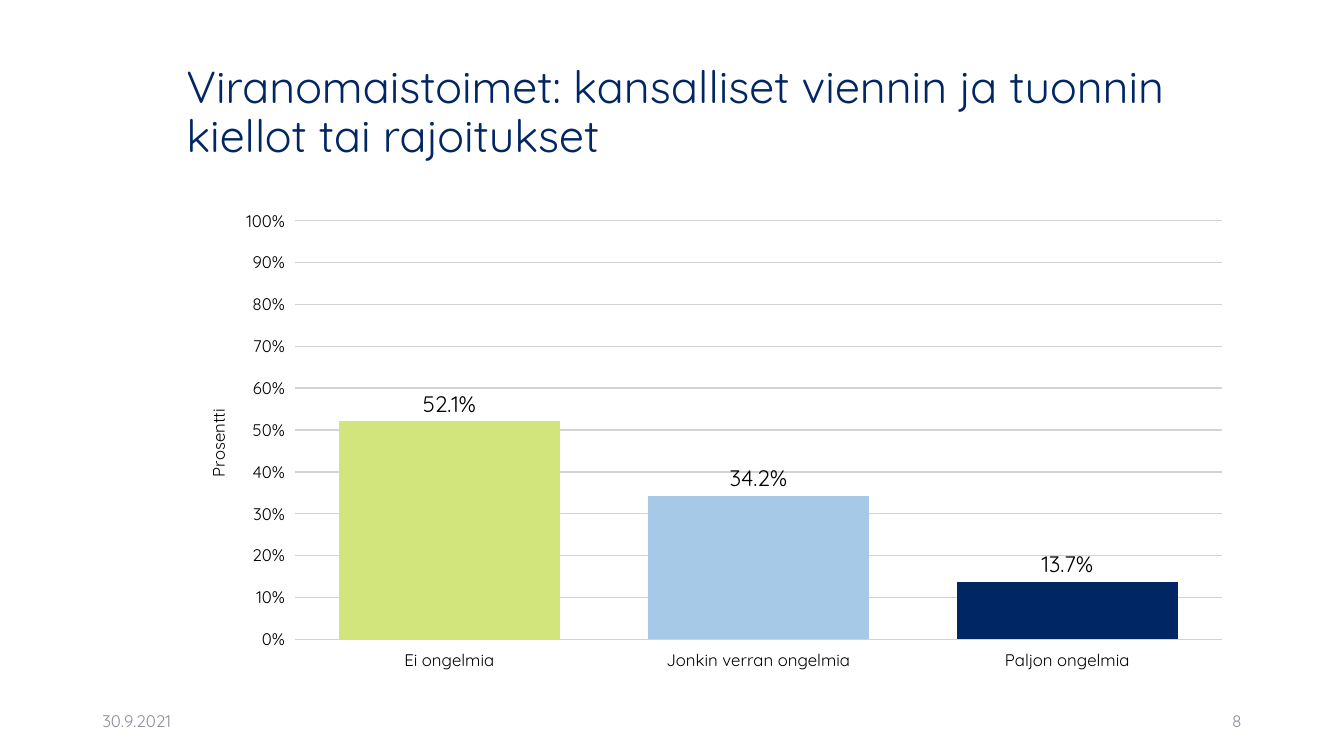
from dataclasses import dataclass

from lxml import etree
from pptx import Presentation
from pptx.chart.data import CategoryChartData
from pptx.dml.color import RGBColor as RGB
from pptx.enum.chart import XL_CHART_TYPE as CT, XL_LABEL_POSITION as LP, XL_TICK_MARK as TM
from pptx.enum.text import MSO_ANCHOR as ANCHOR, PP_ALIGN as ALIGN
from pptx.oxml import parse_xml
from pptx.oxml.ns import nsdecls, qn
from pptx.util import Inches, Pt

COLS, ROWS = 160, 90  # grid of the slide
CELL = Inches(1) / 12


@dataclass(frozen=True)
class Theme:
    font: str = "Quicksand"
    navy: str = "002663"
    lime: str = "D1E57C"
    sky: str = "A5C9E7"
    text: str = "000000"
    muted: str = "8C8E9F"
    grid: str = "D3D3D3"
    paper: str = "FFFFFF"
    title_size: int = 32
    label_size: int = 16
    small_size: int = 12


def color(value):
    return RGB.from_string(value)


def style_font(font, name, size, fill, bold=False):
    font.name, font.size, font.bold = name, Pt(size), bold
    font.color.rgb = color(fill)


def write(tf, text, *, font, size, fill, align=ALIGN.LEFT, spacing=1.0):
    """Put one formatted paragraph into a text frame."""
    p = tf.paragraphs[0]
    p.alignment, p.line_spacing = align, spacing
    r = p.add_run()
    r.text = text
    style_font(r.font, font, size, fill)


def set_layout(parent, index, inner=False, **shares):
    """Place a chart part by shares of the chart's size."""
    for old in parent.findall(qn("c:layout")):
        parent.remove(old)
    layout = etree.Element(qn("c:layout"))
    manual = etree.SubElement(layout, qn("c:manualLayout"))
    settings = {"layoutTarget": "inner"} if inner else {}
    settings |= {"xMode": "edge", "yMode": "edge"} | shares
    for tag, value in settings.items():
        etree.SubElement(manual, qn(f"c:{tag}")).set("val", str(value))
    parent.insert(index, layout)


class Builder:
    def __init__(self, prs, theme):
        self.theme = theme
        self.s = prs.slides.add_slide(prs.slide_layouts[6])

    def box(self, col, row, cols, rows):
        return [round(n * CELL) for n in (col, row, cols, rows)]

    def text(self, text, *place, **fmt):
        tf = self.s.shapes.add_textbox(*self.box(*place)).text_frame
        tf.word_wrap, tf.vertical_anchor = True, ANCHOR.MIDDLE
        write(tf, text, font=self.theme.font, **fmt)

    def column_chart(self, shares, fills, axis_title, *place):
        t = self.theme
        data = CategoryChartData()
        data.categories = list(shares)
        data.add_series("Series 1", list(shares.values()))
        chart = self.s.shapes.add_chart(CT.COLUMN_CLUSTERED, *self.box(*place), data).chart
        chart.has_legend = chart.has_title = False
        style_font(chart.font, t.font, t.small_size, t.text)

        # Columns and their labels
        plot = chart.plots[0]
        plot.gap_width, plot.vary_by_categories = 40, False
        series = plot.series[0]
        series.format.fill.solid()
        series.format.fill.fore_color.rgb = color(fills[0])
        for i, fill in enumerate(fills[1:], 1):
            point = series.points[i].format.fill
            point.solid()
            point.fore_color.rgb = color(fill)
        labels = series.data_labels
        labels.show_value, labels.position = True, LP.OUTSIDE_END
        labels.number_format, labels.number_format_is_linked = "0.0%", False
        style_font(labels.font, t.font, t.label_size, t.text)

        # Axes
        for axis in (chart.category_axis, chart.value_axis):
            axis.major_tick_mark = TM.OUTSIDE
            axis.format.line.fill.background()
        axis = chart.value_axis
        axis.minimum_scale, axis.maximum_scale, axis.major_unit = 0, 1, 0.1
        axis.tick_labels.number_format = "0%"
        axis.tick_labels.number_format_is_linked = False
        grid = axis.major_gridlines.format.line
        grid.color.rgb, grid.width = color(t.grid), Pt(1)
        tf = axis.axis_title.text_frame
        write(tf, axis_title, font=t.font, size=t.small_size, fill=t.text, align=ALIGN.CENTER)
        body = tf._txBody.find(qn("a:bodyPr"))
        body.set("rot", "-5400000")
        body.set("vert", "horz")

        # Plot area
        area = chart._chartSpace.chart.plotArea
        set_layout(area, 0, inner=True, x=0.111, y=0.04, w=0.869, h=0.873)
        set_layout(axis.axis_title._element, 1, x=0.025, y=0.426)
        area.append(parse_xml(
            f'<c:spPr {nsdecls("c", "a")}><a:solidFill><a:srgbClr val="{t.paper}"/>'
            "</a:solidFill></c:spPr>"))


def main():
    prs = Presentation()
    prs.slide_width, prs.slide_height = round(COLS * CELL), round(ROWS * CELL)
    t = Theme()
    slide = Builder(prs, t)

    # Title
    slide.text("Viranomaistoimet: kansalliset viennin ja tuonnin kiellot tai rajoitukset",
               21, 4.8, 127, 17.4, size=t.title_size, fill=t.navy, spacing=0.9)

    # Chart
    shares = {"Ei ongelmia": 0.521, "Jonkin verran ongelmia": 0.342, "Paljon ongelmia": 0.137}
    slide.column_chart(shares, (t.lime, t.sky, t.navy), "Prosentti", 21, 24, 127, 57.1)

    # Footer
    for text, col, align in (("30.9.2021", 11, ALIGN.LEFT), ("8", 113, ALIGN.RIGHT)):
        slide.text(text, col, 83.4, 36, 4.8, size=t.small_size, fill=t.muted, align=align)

    prs.save("out.pptx")


if __name__ == "__main__":
    main()
